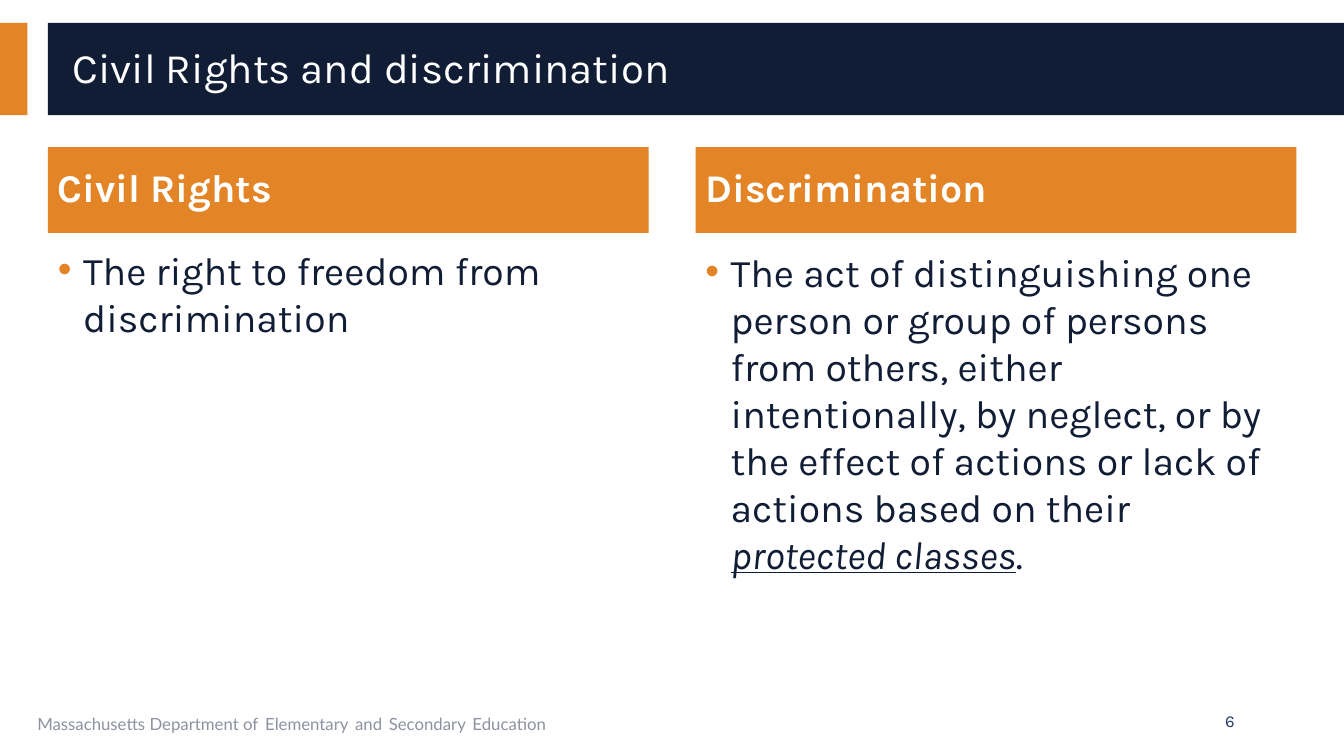
from lxml.etree import SubElement as Sub
from pptx import Presentation
from pptx.dml.color import RGBColor as RGB
from pptx.enum.shapes import MSO_SHAPE as Shape
from pptx.enum.text import MSO_ANCHOR as Anchor, MSO_AUTO_SIZE as Fit, PP_ALIGN as Align
from pptx.oxml.ns import qn
from pptx.util import Cm, Pt

# Content
TITLE = "Civil Rights and discrimination"
# Each column: heading, top of its text, runs as (text, emphasised)
COLS = [
    ("Civil Rights", 6.07, [("The right to freedom from discrimination", False)]),
    ("Discrimination", 6.12, [
        ("The act of distinguishing one person or group of persons from others, "
         "either intentionally, by neglect, or by the effect of actions or lack "
         "of actions based on their ", False),
        ("protected classes", True),
        (".", False),
    ]),
]
FOOTER = ["Massachusetts Department of", "Elementary", "and", "Secondary", "Education"]
NUMBER = "6"

COLORS = {"navy": "101D35", "orange": "E38526", "white": "FFFFFF",
          "gray": "8D92A1", "blue": "203B6A"}

# Layout in centimetres
WIDE, HIGH = 33.87, 19.05
LEFT, STEP, COL = 1.21, 16.32, 15.14
BAND = (0.58, 2.32)
HEAD = (3.71, 2.16)
FOOT = (17.65, 1.02)


def color(name):
    return RGB.from_string(COLORS[name])


def add_run(para, text, size, tint, face="Karla"):
    run = para.add_run()
    run.text = text
    font = run.font
    font.name, font.size = face, Pt(size)
    font.color.rgb = color(tint)
    return run


def set_frame(shape, anchor):
    frame = shape.text_frame
    frame.word_wrap, frame.auto_size = True, Fit.NONE
    frame.vertical_anchor = anchor
    para = frame.paragraphs[0]
    para.alignment = Align.LEFT
    return para


def add_box(x, y, w, h, anchor=Anchor.TOP):
    return set_frame(slide.shapes.add_textbox(Cm(x), Cm(y), Cm(w), Cm(h)), anchor)


def add_rect(x, y, w, h, tint):
    rect = slide.shapes.add_shape(Shape.RECTANGLE, Cm(x), Cm(y), Cm(w), Cm(h))
    rect.shadow.inherit = False
    rect.fill.solid()
    rect.fill.fore_color.rgb = color(tint)
    rect.line.fill.background()
    return rect


def add_bullet(para):
    props = para._p.get_or_add_pPr()
    props.set("marL", str(Cm(0.635)))
    props.set("indent", str(-Cm(0.635)))
    Sub(Sub(props, qn("a:buClr")), qn("a:srgbClr"), val=COLORS["orange"])
    Sub(props, qn("a:buFont"), typeface="Arial")
    Sub(props, qn("a:buChar"), char="•")


deck = Presentation()
deck.slide_width, deck.slide_height = Cm(WIDE), Cm(HIGH)
slide = deck.slides.add_slide(deck.slide_layouts[5])

# Title band, with the title placed in front
top, tall = BAND
add_rect(0, top, 0.69, tall, "orange")
add_rect(LEFT, top, WIDE - LEFT, tall, "navy")
title = slide.shapes.title
title.left, title.top, title.width, title.height = Cm(1.57), Cm(0.81), Cm(31.75), Cm(1.88)
slide.shapes._spTree.append(title._element)
para = set_frame(title, Anchor.MIDDLE)
para.line_spacing = 0.9
add_run(para, TITLE, 30, "white")

# Columns
for i, (head, y, parts) in enumerate(COLS):
    x = LEFT + i * STEP
    para = set_frame(add_rect(x, HEAD[0], COL, HEAD[1], "orange"), Anchor.MIDDLE)
    para.line_spacing = 0.9
    add_run(para, head, 28, "white").font.bold = True

    para = add_box(x, y, COL, 10.54)
    add_bullet(para)
    for text, strong in parts:
        run = add_run(para, text, 28, "navy")
        if strong:
            run.font.italic = run.font.underline = True

# Footer, with wider gaps between its words, and slide number
top, tall = FOOT
para = add_box(0.69, top, 21.44, tall)
for i, word in enumerate(FOOTER):
    if i:
        add_run(para, " ", 18, "blue", "Lato")
    add_run(para, word, 12, "gray", "Lato")
para = add_box(23.75, top, 7.62, tall, Anchor.MIDDLE)
para.alignment = Align.RIGHT
add_run(para, NUMBER, 12, "blue")

deck.save("out.pptx")
